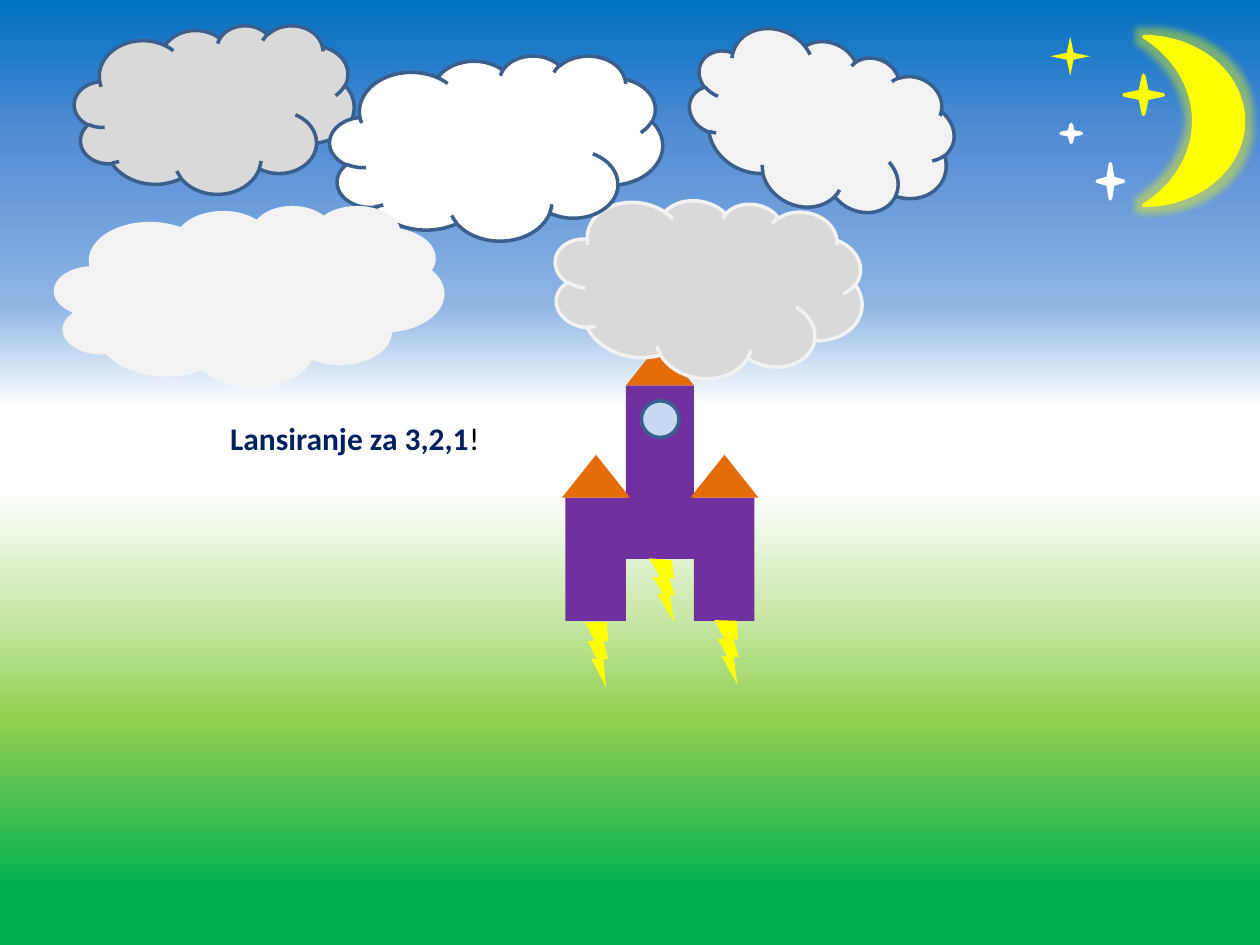
from pptx import Presentation
from pptx.dml.color import RGBColor
from pptx.enum.shapes import MSO_SHAPE
from pptx.oxml.ns import qn
from pptx.util import Cm, Pt
from lxml.etree import SubElement

PURPLE = RGBColor(0x70, 0x30, 0xA0)
ORANGE = RGBColor(0xE4, 0x6C, 0x0A)
YELLOW = RGBColor(0xFF, 0xFF, 0x00)
WHITE = RGBColor(0xFF, 0xFF, 0xFF)
PALE = RGBColor(0xF2, 0xF2, 0xF2)
GREY = RGBColor(0xD9, 0xD9, 0xD9)
GLASS = RGBColor(0xC6, 0xD9, 0xF1)
OUTLINE = RGBColor(0x3A, 0x5F, 0x8C)
NAVY = RGBColor(0x00, 0x20, 0x60)
BLACK = RGBColor(0x00, 0x00, 0x00)
SKY = [(0, "0070C0"), (15, "558ED5"), (32, "8EB4E3"), (43, "FFFFFF"),
       (52, "FFFFFF"), (65, "C9E8A8"), (76, "92D050"), (94, "00B050")]


def add_shape(shapes, kind, x, y, w, h, color, line=None, rot=0):
    sp = shapes.add_shape(kind, Cm(x), Cm(y), Cm(w), Cm(h))
    sp.shadow.inherit = False
    sp.rotation = rot
    sp.fill.solid()
    sp.fill.fore_color.rgb = color
    if line is None:
        sp.line.fill.background()
    else:
        sp.line.color.rgb = line
        sp.line.width = Pt(2)
    return sp


prs = Presentation()
prs.slide_width, prs.slide_height = Cm(25.4), Cm(19.05)
s = prs.slides.add_slide(prs.slide_layouts[6])

# Background: sky fading into grass
fill = s.background.fill
fill.gradient()
fill.gradient_angle = 270
stops = s.background._cSld.find(".//" + qn("a:gsLst"))
for stop in list(stops):
    stops.remove(stop)
for pos, color in SKY:
    stop = SubElement(stops, qn("a:gs"), pos=str(pos * 1000))
    SubElement(stop, qn("a:srgbClr"), val=color)

# Rocket: bodies, noses, window and flames
rocket = s.shapes.add_group_shape().shapes
for x, y, w, h in [(11.4, 10.03, 1.22, 2.49), (12.62, 7.77, 1.37, 3.5),
                   (13.99, 10.03, 1.22, 2.49)]:
    add_shape(rocket, MSO_SHAPE.RECTANGLE, x, y, w, h, PURPLE)
for x, y in [(11.33, 9.17), (13.92, 9.17), (12.62, 6.91)]:
    add_shape(rocket, MSO_SHAPE.ISOSCELES_TRIANGLE, x, y, 1.37, 0.86, ORANGE)
add_shape(rocket, MSO_SHAPE.OVAL, 12.93, 8.08, 0.76, 0.74, GLASS, OUTLINE)
for x, y, w, h, rot in [(11.56, 12.52, 0.99, 1.17, 27.8),
                        (12.85, 11.28, 1.07, 1.07, 29.3),
                        (14.17, 12.5, 1.02, 1.12, 28.4)]:
    add_shape(rocket, MSO_SHAPE.LIGHTNING_BOLT, x, y, w, h, YELLOW, rot=rot)

# Clouds
for x, y, w, h, color, line, rot in [
        (13.84, 0.81, 5.41, 3.4, PALE, OUTLINE, 25),
        (1.5, 0.51, 5.64, 3.4, GREY, OUTLINE, 0),
        (11.15, 3.99, 6.25, 3.63, GREY, PALE, 8.8),
        (6.65, 1.12, 6.71, 3.73, WHITE, OUTLINE, 0),
        (1.09, 4.14, 7.87, 3.66, PALE, None, 0)]:
    add_shape(s.shapes, MSO_SHAPE.CLOUD, x, y, w, h, color, line, rot)

# Glowing moon, facing left
moon = add_shape(s.shapes, MSO_SHAPE.MOON, 23.06, 0.74, 2.01, 3.4, YELLOW, YELLOW)
sppr = moon._element.spPr
sppr.find(qn("a:xfrm")).set("flipH", "1")
glow = SubElement(sppr.find(qn("a:effectLst")), qn("a:glow"), rad=str(Cm(0.28)))
color = SubElement(glow, qn("a:srgbClr"), val=str(YELLOW))
SubElement(color, qn("a:alpha"), val="40000")

# Stars
for x, y, w, h, color, line in [
        (22.66, 1.52, 0.79, 0.79, YELLOW, YELLOW),
        (21.18, 0.74, 0.79, 0.79, YELLOW, None),
        (21.39, 2.51, 0.41, 0.36, WHITE, WHITE),
        (22.12, 3.3, 0.53, 0.71, WHITE, WHITE)]:
    add_shape(s.shapes, MSO_SHAPE.STAR_4_POINT, x, y, w, h, color, line)

# Countdown text
tf = s.shapes.add_textbox(Cm(4.39), Cm(8.33), Cm(6.86), Cm(1.02)).text_frame
tf.word_wrap = True
p = tf.paragraphs[0]
for text, color, bold in [("Lansiranje za 3,2,1", NAVY, True), ("!", BLACK, False)]:
    r = p.add_run()
    r.text = text
    r.font.name = "Calibri"
    r.font.size = Pt(18)
    r.font.bold = bold
    r.font.color.rgb = color

prs.save("out.pptx")
